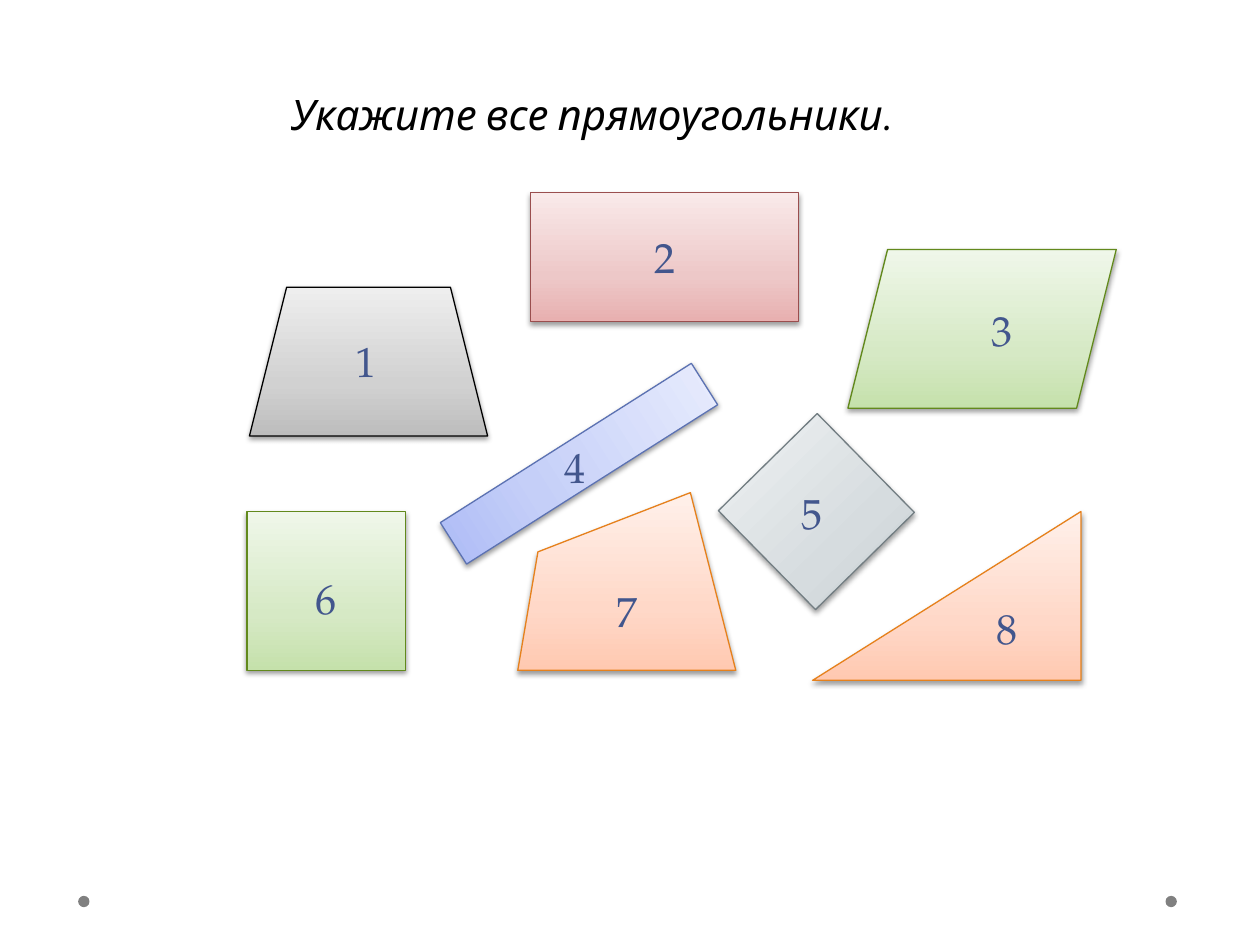
"""Builds a geometry slide asking pupils to point out every rectangle."""
from copy import deepcopy
from dataclasses import dataclass

from lxml.etree import SubElement
from pptx import Presentation
from pptx.dml.color import RGBColor
from pptx.enum.shapes import MSO_SHAPE
from pptx.enum.text import MSO_ANCHOR, MSO_AUTO_SIZE, PP_ALIGN
from pptx.oxml.ns import qn
from pptx.util import Inches, Pt


@dataclass(frozen=True)
class Theme:
    question_font: str = "Karla"
    number_font: str = "TeX Gyre Pagella"
    text_size: int = 24
    question_color: str = "000000"
    number_color: str = "42568D"
    dot_color: str = "808080"
    outline_width: float = 0.75
    stops: tuple = (0, 0.35, 1)


THEME = Theme()
PALETTES = {
    "red": ("9A4E4E", "E8B0B0", "EDC8C8", "F9E9E9"),
    "green": ("62891C", "C5E1AB", "D6E9C5", "EFF7E9"),
    "black": ("000000", "BDBDBD", "D1D1D1", "EEEEEE"),
    "orange": ("E6811C", "FFC9B1", "FFD8C8", "FFF0EA"),
    "gray": ("727D82", "C5CED2", "D6DCDF", "EFF2F3"),
    "blue": ("5C72B2", "ADBBF6", "C5CFF8", "E8ECFD"),
}

# All places are percentages of the slide's width and height.
QUESTION = "Укажите все прямоугольники."
QUESTION_BOX = (22.1, 8.67, 61.5, 6.67)
DOTS = [(92.5, 94.8, 0.9, 1.2), (6.2, 94.8, 0.9, 1.2)]
FIGURES = [
    (MSO_SHAPE.RECTANGLE, (42.1, 20.4, 21.3, 13.6), 0, "red"),
    (MSO_SHAPE.PARALLELOGRAM, (67.3, 26.4, 21.3, 16.8), 0, "green"),
    (MSO_SHAPE.TRAPEZOID, (19.8, 30.4, 18.9, 15.73), 0, "black"),
    (MSO_SHAPE.RIGHT_TRIANGLE, (64.5, 54.13, 21.3, 17.87), 0, "orange"),
    (MSO_SHAPE.RECTANGLE, (59.3, 46.8, 11, 14.67), 315.5, "gray"),
    (MSO_SHAPE.RECTANGLE, (19.6, 54.13, 12.6, 16.8), 0, "green"),
    (None, [(41.1, 70.93), (42.7, 58.4), (54.8, 52.13), (58.4, 70.93)], 0, "orange"),
    (MSO_SHAPE.RECTANGLE, (44, 33.33, 3.9, 31.47), 57.6, "blue"),
]
NUMBER_SIZE = (6.3, 6.8)
NUMBERS = {
    "1": (25.9, 34.8), "2": (49.6, 23.73), "3": (76.4, 31.47), "4": (42.5, 46),
    "5": (61.3, 50.8), "6": (22.7, 59.87), "7": (46.6, 61.2), "8": (76.8, 63.07),
}

deck = Presentation()
deck.slide_width, deck.slide_height = Inches(10), Inches(7.5)


def place(*shares):
    sides = (deck.slide_width, deck.slide_height) * 2
    return [round(side * share / 100) for side, share in zip(sides, shares)]


def write(box, text, font_name, color, align, anchor, italic=False):
    frame = box.text_frame
    frame.text = text
    frame.word_wrap = True
    frame.auto_size = MSO_AUTO_SIZE.NONE
    frame.vertical_anchor = anchor
    paragraph = frame.paragraphs[0]
    paragraph.alignment = align
    font = paragraph.font
    font.name, font.size, font.italic = font_name, Pt(THEME.text_size), italic
    font.color.rgb = RGBColor.from_string(color)


def paint(figure, palette):
    outline, *shades = PALETTES[palette]
    figure.fill.gradient()
    figure.fill.gradient_angle = 90
    properties = figure._element.spPr
    stop_list = properties.find(".//" + qn("a:gsLst"))
    stop_list.insert(1, deepcopy(stop_list[0]))
    for stop, position, shade in zip(figure.fill.gradient_stops, THEME.stops, shades):
        stop.position = position
        stop.color.rgb = RGBColor.from_string(shade)
    figure.line.color.rgb = RGBColor.from_string(outline)
    figure.line.width = Pt(THEME.outline_width)
    figure.shadow.inherit = False
    shadow = SubElement(
        properties.find(qn("a:effectLst")), qn("a:outerShdw"),
        blurRad=str(Pt(3.1)), dist=str(Pt(1.6)), dir="5400000", rotWithShape="0")
    black = SubElement(shadow, qn("a:srgbClr"), val="000000")
    SubElement(black, qn("a:alpha"), val="38000")


def draw(shapes, kind, outline, rotation, palette):
    if kind is None:
        start, *corners = [place(*corner) for corner in outline]
        builder = shapes.build_freeform(*start)
        builder.add_line_segments(corners, close=True)
        figure = builder.convert_to_shape()
    else:
        figure = shapes.add_shape(kind, *place(*outline))
    figure.rotation = rotation
    if kind == MSO_SHAPE.RIGHT_TRIANGLE:
        figure._element.spPr.xfrm.set("flipH", "1")
    paint(figure, palette)


def main():
    slide = deck.slides.add_slide(deck.slide_layouts[5])
    question = slide.shapes.title
    question.left, question.top, question.width, question.height = place(*QUESTION_BOX)
    write(question, QUESTION, THEME.question_font, THEME.question_color,
          PP_ALIGN.LEFT, MSO_ANCHOR.TOP, italic=True)

    for dot_box in DOTS:
        dot = slide.shapes.add_shape(MSO_SHAPE.OVAL, *place(*dot_box))
        dot.fill.solid()
        dot.fill.fore_color.rgb = RGBColor.from_string(THEME.dot_color)
        dot.line.fill.background()
        dot.shadow.inherit = False

    for figure in FIGURES:
        draw(slide.shapes, *figure)
    for number, corner in NUMBERS.items():
        label = slide.shapes.add_textbox(*place(*corner, *NUMBER_SIZE))
        write(label, number, THEME.number_font, THEME.number_color,
              PP_ALIGN.CENTER, MSO_ANCHOR.MIDDLE)
    deck.save("out.pptx")


if __name__ == "__main__":
    main()
